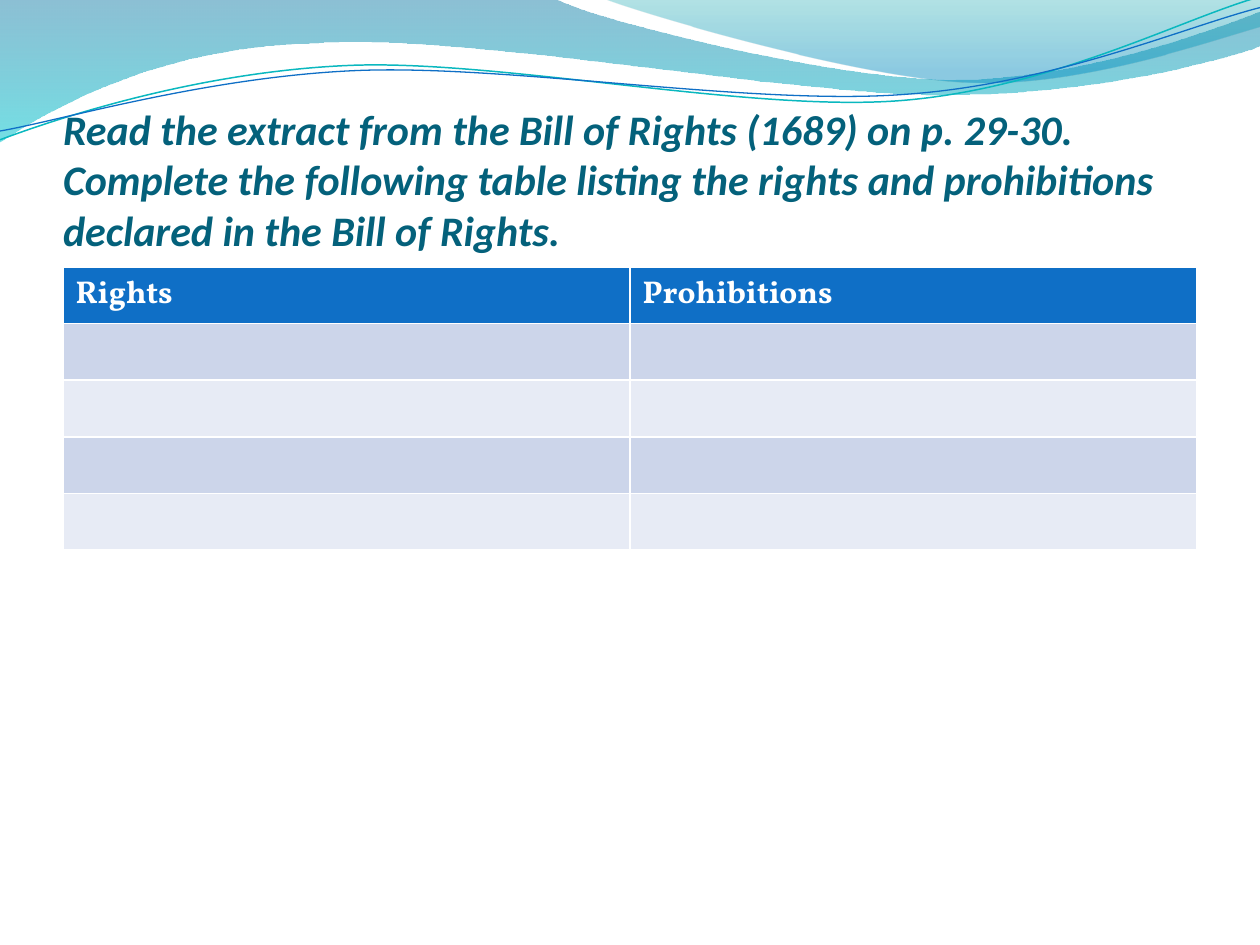
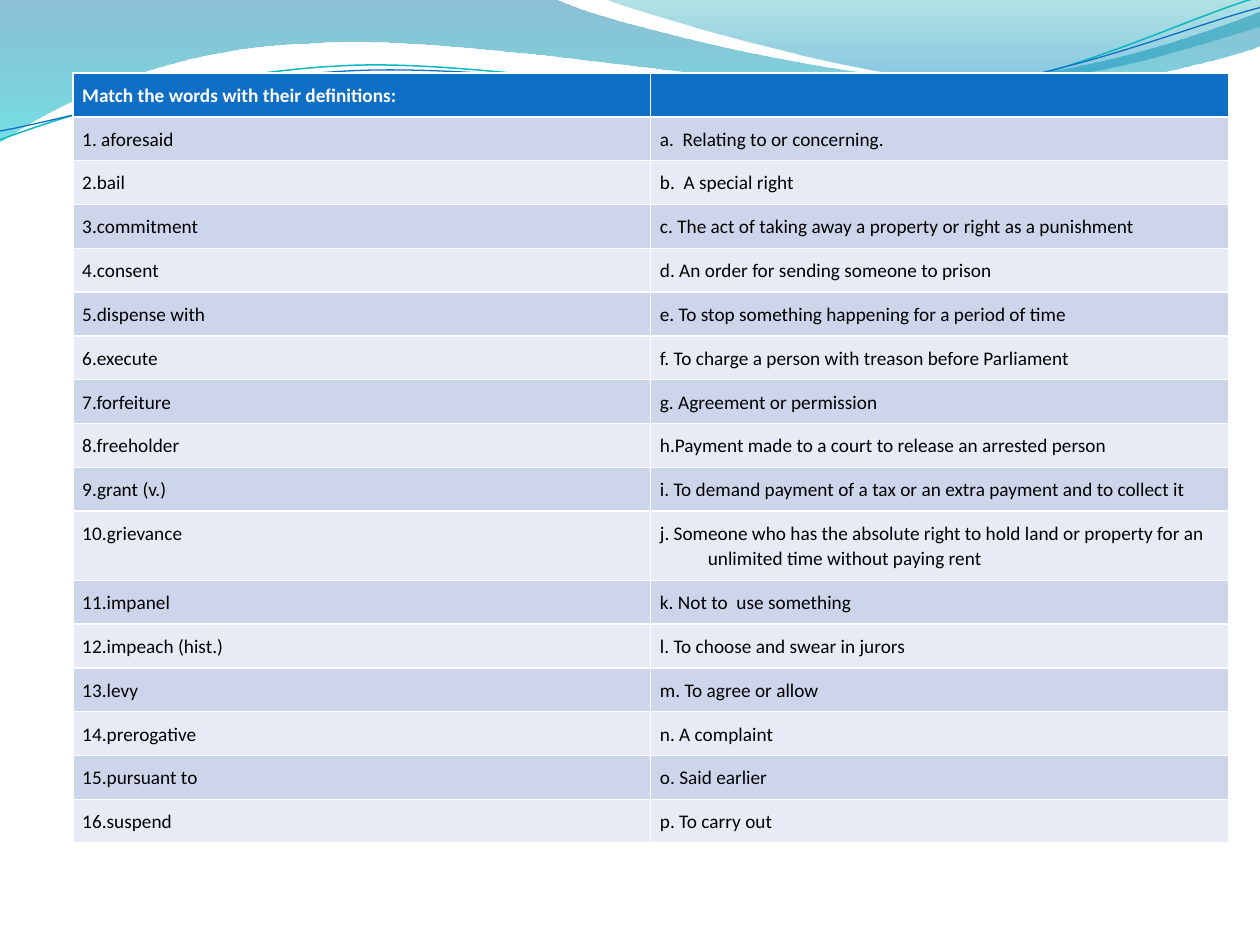
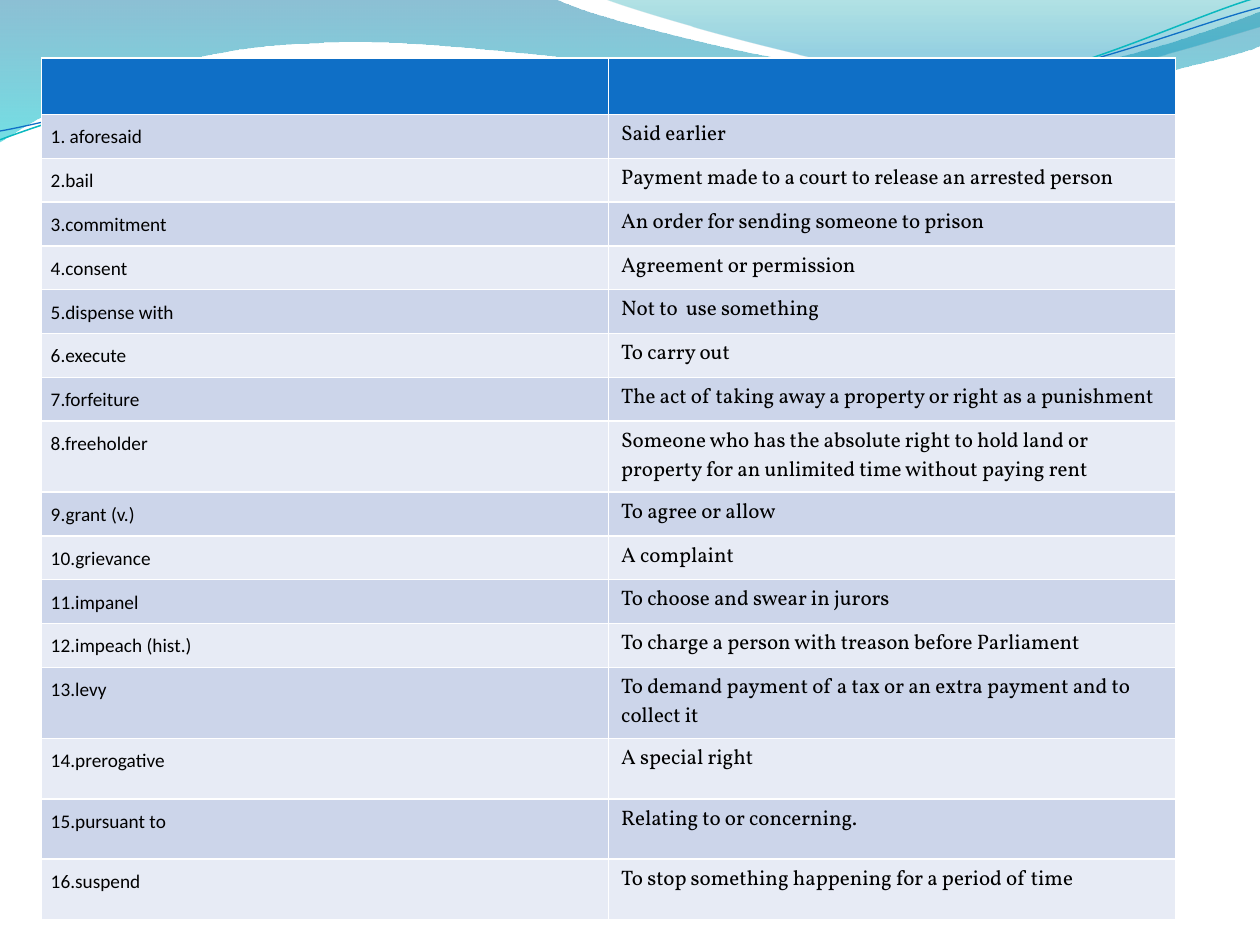
from dataclasses import dataclass
from typing import NamedTuple, Optional
import math

from lxml import etree
from pptx import Presentation
from pptx.dml.color import RGBColor
from pptx.enum.text import MSO_ANCHOR, MSO_AUTO_SIZE, PP_ALIGN
from pptx.oxml.ns import qn
from pptx.text.text import Font
from pptx.util import Inches, Pt

BOTTOM, LEFT, NO_AUTOFIT = MSO_ANCHOR.BOTTOM, PP_ALIGN.LEFT, MSO_AUTO_SIZE.NONE
TITLE_ONLY, BLANK = 5, 6


@dataclass(frozen=True)
class Theme:
    blue: str = "0F6FC6"
    teal: str = "0AB8BF"
    title: str = "04617B"
    white: str = "FFFFFF"
    black: str = "000000"
    bands: tuple = ("CCD5EA", "E7EBF5")
    sans: str = "Calibri"
    serif: str = "Vollkorn"
    title_size: int = 24
    heading_size: int = 18
    answer_size: int = 12
    word_size: int = 11


THEME = Theme()


class Box(NamedTuple):
    left: float
    top: float
    width: float
    height: float


class Stop(NamedTuple):
    position: float
    color: str
    opacity: int


class Wave(NamedTuple):
    """An outline as it lies on the slide: segments of 2 numbers are lines,
    of 6 are Bézier curves; box is the frame before rotation."""
    box: Box
    start: tuple
    segments: tuple
    stops: tuple = ()
    line: str = ""
    width: float = 0
    rotation: float = 0


class CellStyle(NamedTuple):
    font: str
    size: int
    color: str = THEME.black
    bold: bool = False
    inset: Optional[float] = None
    spacing: Optional[float] = None
    hanging: float = 0


class TableSpec(NamedTuple):
    left: float
    top: float
    width: float
    row_heights: tuple
    rows: list
    header: CellStyle
    columns: tuple


class Term(NamedTuple):
    word: str
    label: str
    definition: str


WAVES = (
    Wave(Box(-0.01, -0.01, 10.02, 1.14), (0, 0), (
        (4.4, -0.01),
        (4.76, 0.17, 6.64, 0.63, 7.58, 0.63),
        (8.53, 0.63, 9.58, 0.26, 10, 0.09),
        (10.01, 0.36),
        (9.83, 0.44, 8.7, 0.76, 7.46, 0.75),
        (6.22, 0.75, 3.82, 0.28, 2.57, 0.34),
        (1.29, 0.36, 0.46, 0.83, -0.01, 1.13),
        (0, 0)),
        stops=(Stop(0, "0074A1", 45), Stop(1, "00C6CF", 55))),
    Wave(Box(4.79, -0.01, 5.21, 0.7), (4.79, -0.01), (
        (5.09, 0.11, 6.82, 0.62, 7.69, 0.65),
        (8.56, 0.69, 9.61, 0.32, 10, 0.21),
        (10, 0),
        (4.79, -0.01)),
        stops=(Stop(0, "00A1A9", 30), Stop(0.8, "008BBF", 45))),
    Wave(Box(-0.02, 0.22, 10.02, 0.71), (0, 1.11), (
        (0.48, 0.93, 1.58, 0.57, 2.77, 0.52),
        (3.95, 0.47, 5.93, 0.89, 7.13, 0.8),
        (8.33, 0.71, 9.38, 0.15, 9.98, -0.02)),
        line=THEME.teal, width=0.85, rotation=357.3),
    Wave(Box(-0.02, 0.3, 10.03, 0.58), (0, 1.04), (
        (0.47, 0.96, 1.64, 0.61, 2.83, 0.56),
        (4.03, 0.51, 5.97, 0.84, 7.17, 0.75),
        (8.36, 0.67, 9.41, 0.21, 10, 0.06)),
        line=THEME.blue, width=0.75, rotation=357.3),
)

TERMS = (
    Term("1. aforesaid", "o. ", "Said earlier"),
    Term("2.bail", "h.", "Payment made to a court to release an arrested person"),
    Term("3.commitment", "d. ", "An order for sending someone to prison"),
    Term("4.consent", "g. ", "Agreement or permission"),
    Term("5.dispense with", "k. ", "Not to  use something"),
    Term("6.execute", "p. ", "To carry out"),
    Term("7.forfeiture", "c. ",
         "The act of taking away a property or right as a punishment"),
    Term("8.freeholder", "j. ",
         "Someone who has the absolute right to hold land or property "
         "for an unlimited time without paying rent"),
    Term("9.grant (v.)", "m. ", "To agree or allow"),
    Term("10.grievance", "n. ", "A complaint"),
    Term("11.impanel", "l. ", "To choose and swear in jurors"),
    Term("12.impeach (hist.)", "f. ",
         "To charge a person with treason before Parliament"),
    Term("13.levy", "i. ",
         "To demand payment of a tax or an extra payment and to collect it"),
    Term("14.prerogative", "b.  ", "A special right"),
    Term("15.pursuant to", "a.  ", "Relating to or concerning."),
    Term("16.suspend", "e. ", "To stop something happening for a period of time"),
)

INSTRUCTION = ("Read the extract from the Bill of Rights (1689) on p. 29-30. "
               "Complete the following table listing the rights and prohibitions "
               "declared in the Bill of Rights.")

HEADING = CellStyle(THEME.serif, THEME.heading_size, THEME.white, bold=True)
ENTRY = CellStyle(THEME.serif, THEME.heading_size)
ANSWER = CellStyle(THEME.serif, THEME.answer_size)
WORD = CellStyle(THEME.sans, THEME.word_size, inset=Pt(5.25), spacing=1.07)
DEFINITION = WORD._replace(hanging=0.38)
PROMPT = WORD._replace(color=THEME.white, bold=True)

matched_by_letter = sorted(TERMS, key=lambda term: term.label)

RIGHTS_TABLE = TableSpec(
    0.5, 2.12, 9, (0.41,) * 5,
    [("Rights", "Prohibitions")] + [("", "")] * 4,
    HEADING, (ENTRY, ENTRY))
MATCHING_TABLE = TableSpec(
    0.58, 0.58, 9.17, (0.34,) * 17,
    [("Match the words with their definitions:", "")]
    + [(term.word, match.label + match.definition)
       for term, match in zip(TERMS, matched_by_letter)],
    PROMPT, (WORD, DEFINITION))
ANSWER_TABLE = TableSpec(
    0.33, 0.46, 9, (0.3,) * 14 + (0.48,) * 3,
    [("", "")] + [(term.word, term.definition) for term in TERMS],
    HEADING, (WORD, ANSWER))


def rgb(color: str) -> RGBColor:
    return RGBColor.from_string(color)


def set_format(target, values: dict) -> None:
    for name, value in values.items():
        setattr(target, name, value)


def local_point(wave: Wave, x: float, y: float) -> tuple:
    """Turn a slide point back by the rotation and measure it from the box."""
    box = wave.box
    angle = math.radians(-wave.rotation)
    dx = x - box.left - box.width / 2
    dy = y - box.top - box.height / 2
    return (Inches(dx * math.cos(angle) - dy * math.sin(angle) + box.width / 2),
            Inches(dx * math.sin(angle) + dy * math.cos(angle) + box.height / 2))


def set_curves(sp, wave: Wave) -> None:
    """Replace the straight steps of a freeform with the wave's segments."""
    outline = next(sp._element.iter(qn("a:path")))
    set_format(sp, {name: Inches(value) for name, value in wave.box._asdict().items()})
    sp.rotation = wave.rotation
    outline.set("w", str(sp.width))
    outline.set("h", str(sp.height))
    for step in list(outline):
        outline.remove(step)
    tags = {2: "a:lnTo", 6: "a:cubicBezTo"}
    steps = [("a:moveTo", wave.start)] + [(tags[len(seg)], seg) for seg in wave.segments]
    for tag, numbers in steps:
        step = etree.SubElement(outline, qn(tag))
        for x, y in zip(numbers[::2], numbers[1::2]):
            px, py = local_point(wave, x, y)
            etree.SubElement(step, qn("a:pt"), x=str(px), y=str(py))
    if wave.stops:
        etree.SubElement(outline, qn("a:close"))


def draw_wave(s, wave: Wave):
    x, y = wave.start
    builder = s.shapes.build_freeform(Inches(x), Inches(y))
    builder.add_line_segments(
        [(Inches(seg[-2]), Inches(seg[-1])) for seg in wave.segments], close=False)
    sp = builder.convert_to_shape()
    set_curves(sp, wave)
    sp.shadow.inherit = False
    if not wave.stops:
        sp.fill.background()
        sp.line.color.rgb = rgb(wave.line)
        sp.line.width = Pt(wave.width)
        return sp
    sp.line.fill.background()
    sp.fill.gradient()
    sp.fill.gradient_angle = 270
    for gradient_stop, stop in zip(sp.fill.gradient_stops, wave.stops):
        gradient_stop.position = stop.position
        gradient_stop.color.rgb = rgb(stop.color)
    colors = sp._element.spPr.iter(qn("a:srgbClr"))
    for color, stop in zip(list(colors), wave.stops):
        etree.SubElement(color, qn("a:alpha"), val=str(stop.opacity * 1000))
    return sp


def move_to_master(prs, shapes: list) -> None:
    """Place shapes drawn on a slide behind everything on the master."""
    tree = prs.slide_master.shapes._spTree
    for index, sp in enumerate(shapes, start=2):
        tree.insert(index, sp._element)


def add_title(s, text: str) -> None:
    title = s.shapes.title
    set_format(title, dict(left=Inches(0.5), top=Inches(0.77),
                           width=Inches(9), height=Inches(1.25)))
    tf = title.text_frame
    set_format(tf, dict(auto_size=NO_AUTOFIT, word_wrap=True, vertical_anchor=BOTTOM,
                        margin_left=0, margin_top=Inches(0.05),
                        margin_right=0, margin_bottom=0))
    p = tf.paragraphs[0]
    p.alignment = LEFT
    r = p.add_run()
    r.text = text
    set_format(r.font, dict(name=THEME.sans, size=Pt(THEME.title_size),
                            bold=True, italic=True))
    r.font.color.rgb = rgb(THEME.title)


def write_cell(cell, text: str, style: CellStyle) -> None:
    if style.inset is not None:
        for side in ("left", "top", "right", "bottom"):
            setattr(cell, "margin_" + side, style.inset)
    p = cell.text_frame.paragraphs[0]
    if style.spacing:
        p.line_spacing = style.spacing
    if style.hanging:
        p_pr = p._p.get_or_add_pPr()
        p_pr.set("marL", str(Inches(style.hanging)))
        p_pr.set("indent", str(-Inches(style.hanging)))
    if text:
        r = p.add_run()
        r.text = text
        font = r.font
    else:
        font = Font(p._p.get_or_add_endParaRPr())
    set_format(font, dict(name=style.font, size=Pt(style.size), bold=style.bold))
    font.color.rgb = rgb(style.color)


def add_table(s, spec: TableSpec) -> None:
    """Add a table whose white rules come from the default table style."""
    frame = s.shapes.add_table(
        len(spec.rows), len(spec.columns), Inches(spec.left), Inches(spec.top),
        Inches(spec.width), Inches(sum(spec.row_heights)))
    table = frame.table
    for row, height in zip(table.rows, spec.row_heights):
        row.height = Inches(height)
    for i, texts in enumerate(spec.rows):
        color = THEME.bands[(i - 1) % 2] if i else THEME.blue
        for j, text in enumerate(texts):
            cell = table.cell(i, j)
            cell.fill.solid()
            cell.fill.fore_color.rgb = rgb(color)
            write_cell(cell, text, spec.columns[j] if i else spec.header)


def main() -> None:
    prs = Presentation()
    prs.slide_width, prs.slide_height = Inches(10), Inches(7.5)

    s = prs.slides.add_slide(prs.slide_layouts[TITLE_ONLY])
    move_to_master(prs, [draw_wave(s, wave) for wave in WAVES])
    add_title(s, INSTRUCTION)
    add_table(s, RIGHTS_TABLE)

    for spec in (MATCHING_TABLE, ANSWER_TABLE):
        s = prs.slides.add_slide(prs.slide_layouts[BLANK])
        add_table(s, spec)

    prs.save("out.pptx")


if __name__ == "__main__":
    main()
